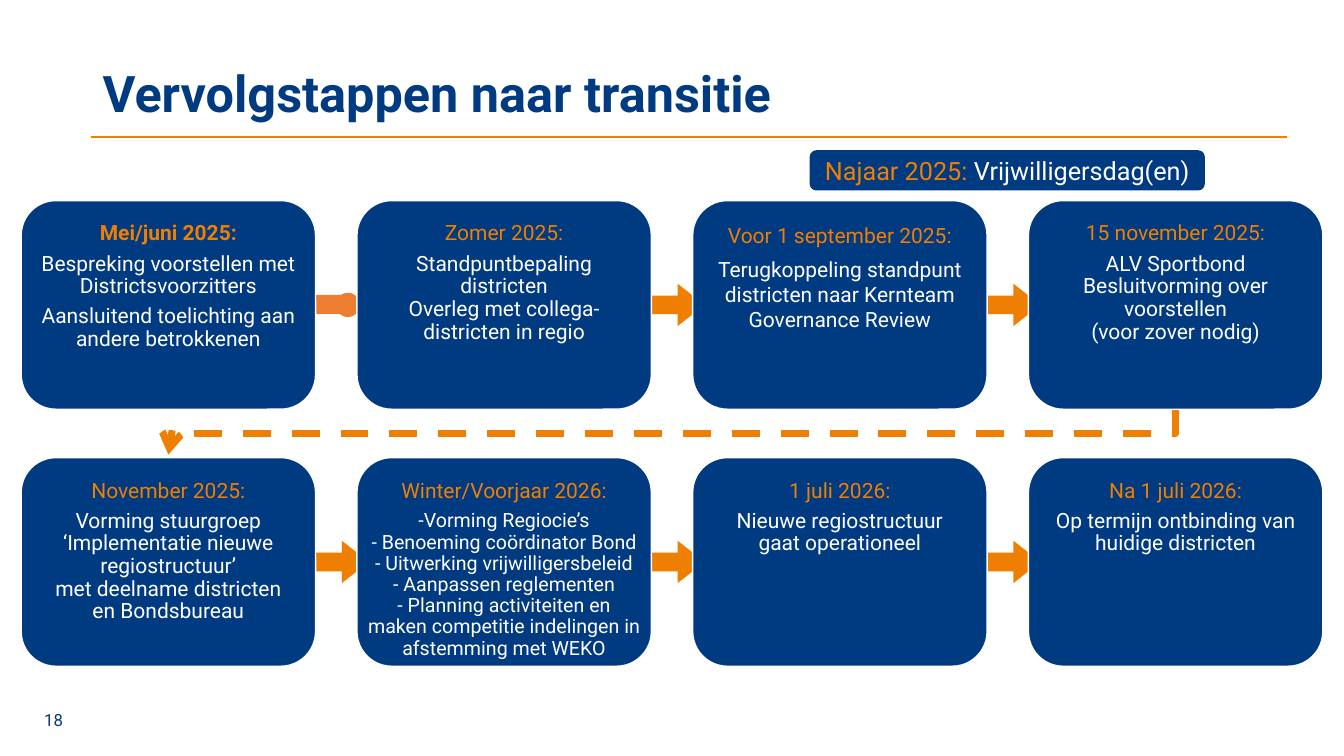
from dataclasses import dataclass

from lxml import etree
from pptx import Presentation
from pptx.dml.color import RGBColor
from pptx.enum.dml import MSO_LINE
from pptx.enum.shapes import MSO_CONNECTOR, MSO_SHAPE
from pptx.enum.text import MSO_ANCHOR, PP_ALIGN
from pptx.oxml.ns import qn
from pptx.util import Inches, Pt

ROUNDED, ARROW = MSO_SHAPE.ROUNDED_RECTANGLE, MSO_SHAPE.RIGHT_ARROW
BAR, DOT = MSO_SHAPE.RECTANGLE, MSO_SHAPE.OVAL
STRAIGHT, DASH = MSO_CONNECTOR.STRAIGHT, MSO_LINE.DASH
TOP, MIDDLE = MSO_ANCHOR.TOP, MSO_ANCHOR.MIDDLE
LEFT, CENTER = PP_ALIGN.LEFT, PP_ALIGN.CENTER


@dataclass(frozen=True)
class Theme:
    """Colours, font and type sizes of the slide."""
    font: str = "Roboto"
    navy: str = "003A81"
    orange: str = "EE7F02"
    coral: str = "ED7D31"
    rule: str = "EF7F01"
    white: str = "FFFFFF"
    title: float = 36
    banner: float = 18
    body: float = 15
    small: float = 14
    number: float = 12


@dataclass(frozen=True)
class Step:
    """One stage of the transition and its text settings."""
    heading: str
    body: tuple
    bold: bool = False
    inset: float = 0.12
    spacing: float = 0.9
    gap: float = 5.25
    size: float = Theme.body
    body_gap: float = 5.25


STEPS = (
    (
        Step("Mei/juni 2025:",
             ("Bespreking voorstellen met Districtsvoorzitters",
              "Aansluitend toelichting aan andere betrokkenen"), bold=True, inset=0),
        Step("Zomer 2025:",
             ("Standpuntbepaling districten\nOverleg met collega-districten in regio",)),
        Step("Voor 1 september 2025:",
             ("Terugkoppeling standpunt districten naar Kernteam\nGovernance Review",),
             spacing=1, gap=5.9),
        Step("15 november 2025:",
             ("ALV Sportbond\nBesluitvorming over voorstellen\n(voor zover nodig)",), inset=0),
    ),
    (
        Step("November 2025:",
             ("Vorming stuurgroep ‘Implementatie nieuwe regiostructuur’\n"
              "met deelname districten en Bondsbureau",)),
        Step("Winter/Voorjaar 2026:",
             ("-Vorming Regiocie’s", "- Benoeming coördinator Bond",
              "- Uitwerking vrijwilligersbeleid", "- Aanpassen reglementen",
              "- Planning activiteiten en maken competitie indelingen in afstemming met WEKO"),
             inset=0, gap=6, size=Theme.small, body_gap=0),
        Step("1 juli 2026:", ("Nieuwe regiostructuur gaat operationeel",)),
        Step("Na 1 juli 2026:", ("Op termijn ontbinding van huidige districten",)),
    ),
)
GRID_LEFT, COLUMN_PITCH, BOX_WIDTH = 0.21, 3.33, 2.92
GRID_TOP, ROW_PITCH, BOX_HEIGHT = 1.99, 2.55, 2.07


class SlideBuilder:
    """Draws the elements of one slide in a theme."""

    def __init__(self, page, theme):
        self.page, self.theme = page, theme

    def shape(self, kind, left, top, width, height, fill, outline=None):
        """Add a filled preset shape."""
        shape = self.page.shapes.add_shape(
            kind, Inches(left), Inches(top), Inches(width), Inches(height))
        shape.shadow.inherit = False
        shape.fill.solid()
        shape.fill.fore_color.rgb = RGBColor.from_string(fill)
        if outline:
            shape.line.color.rgb = RGBColor.from_string(outline)
            shape.line.width = Pt(1)
        else:
            shape.line.fill.background()
        return shape

    def span(self, para, text, size, color, bold=False):
        """Add styled text to a paragraph, breaking at line ends."""
        for index, line in enumerate(text.split("\n")):
            if index:
                para.add_line_break()
            run = para.add_run()
            run.text = line
            run.font.name, run.font.size, run.font.bold = self.theme.font, Pt(size), bold
            run.font.color.rgb = RGBColor.from_string(color)

    def label(self, left, top, width, height, text, size, bold=False):
        """Add a single-line text box."""
        box = self.page.shapes.add_textbox(
            Inches(left), Inches(top), Inches(width), Inches(height))
        frame = box.text_frame
        frame.word_wrap, frame.vertical_anchor = True, MIDDLE
        para = frame.paragraphs[0]
        para.alignment, para.line_spacing = LEFT, 0.9
        self.span(para, text, size, self.theme.navy, bold)

    def rule(self, left, right, top):
        """Add the line below the title."""
        line = self.page.shapes.add_connector(
            STRAIGHT, Inches(left), Inches(top), Inches(right), Inches(top))
        line.line.color.rgb = RGBColor.from_string(self.theme.rule)
        line.line.width = Pt(2)
        etree.SubElement(line._element.spPr, qn("a:effectLst"))

    def step_box(self, left, top, step):
        """Add a step with its heading and body."""
        theme = self.theme
        box = self.shape(ROUNDED, left, top, BOX_WIDTH, BOX_HEIGHT, theme.navy, theme.white)
        frame = box.text_frame
        frame.word_wrap, frame.vertical_anchor = True, TOP
        frame.margin_left = frame.margin_right = Inches(step.inset)
        frame.margin_top = frame.margin_bottom = Inches(0.12)
        heading = frame.paragraphs[0]
        heading.space_after = Pt(step.gap)
        self.span(heading, step.heading, theme.body, theme.orange, step.bold)
        for text in step.body:
            para = frame.add_paragraph()
            para.space_after = Pt(step.body_gap)
            self.span(para, text, step.size, theme.white)
        for para in frame.paragraphs:
            para.alignment, para.line_spacing = CENTER, step.spacing

    def arrow(self, left, middle):
        """Add a block arrow whose tip tucks under the next step."""
        arrow = self.shape(ARROW, left, middle - 0.21, 0.53, 0.42, self.theme.orange)
        arrow.adjustments[0], arrow.adjustments[1] = 0.44, 0.64

    def round_link(self, left, middle):
        """Add a bar with a round end."""
        self.shape(BAR, left, middle - 0.1, 0.32, 0.19, self.theme.coral)
        self.shape(DOT, left + 0.2, middle - 0.12, 0.24, 0.24, self.theme.coral)

    def return_path(self, points):
        """Add the dashed arrow between the two rows."""
        start, *rest = [(Inches(x), Inches(y)) for x, y in points]
        builder = self.page.shapes.build_freeform(*start)
        builder.add_line_segments(rest, close=False)
        route = builder.convert_to_shape()
        route.shadow.inherit = False
        route.fill.background()
        route.line.color.rgb = RGBColor.from_string(self.theme.orange)
        route.line.width, route.line.dash_style = Pt(5), DASH
        etree.SubElement(route.line._get_or_add_ln(), qn("a:tailEnd"), type="arrow")

    def banner(self, left, top, width, height, heading, text):
        """Add the two-coloured banner."""
        box = self.shape(ROUNDED, left, top, width, height, self.theme.navy)
        frame = box.text_frame
        frame.word_wrap, frame.vertical_anchor = True, MIDDLE
        para = frame.paragraphs[0]
        para.alignment = CENTER
        self.span(para, heading, self.theme.banner, self.theme.orange)
        self.span(para, text, self.theme.banner, self.theme.white)


def main():
    """Build and save the deck."""
    deck = Presentation()
    deck.slide_width, deck.slide_height = Inches(13.33), Inches(7.5)
    theme = Theme()
    slide = SlideBuilder(deck.slides.add_slide(deck.slide_layouts[6]), theme)
    slide.rule(0.9, 12.76, 1.36)
    slide.label(0.92, 0.4, 10.93, 1.11, "Vervolgstappen naar transitie", theme.title, True)
    slide.label(0.34, 6.95, 3, 0.4, "18", theme.number)
    slide.return_path([(11.66, 4.06), (11.66, 4.3), (1.67, 4.3), (1.67, 4.51)])
    for row, steps in enumerate(STEPS):
        top = GRID_TOP + row * ROW_PITCH
        for column, step in enumerate(steps):
            left = GRID_LEFT + column * COLUMN_PITCH
            if column < len(steps) - 1:
                link = slide.round_link if row == column == 0 else slide.arrow
                link(left + BOX_WIDTH, top + BOX_HEIGHT / 2)
            slide.step_box(left, top, step)
    slide.banner(8.03, 1.49, 3.92, 0.4, "Najaar 2025: ", "Vrijwilligersdag(en)")
    deck.save("out.pptx")


if __name__ == "__main__":
    main()
